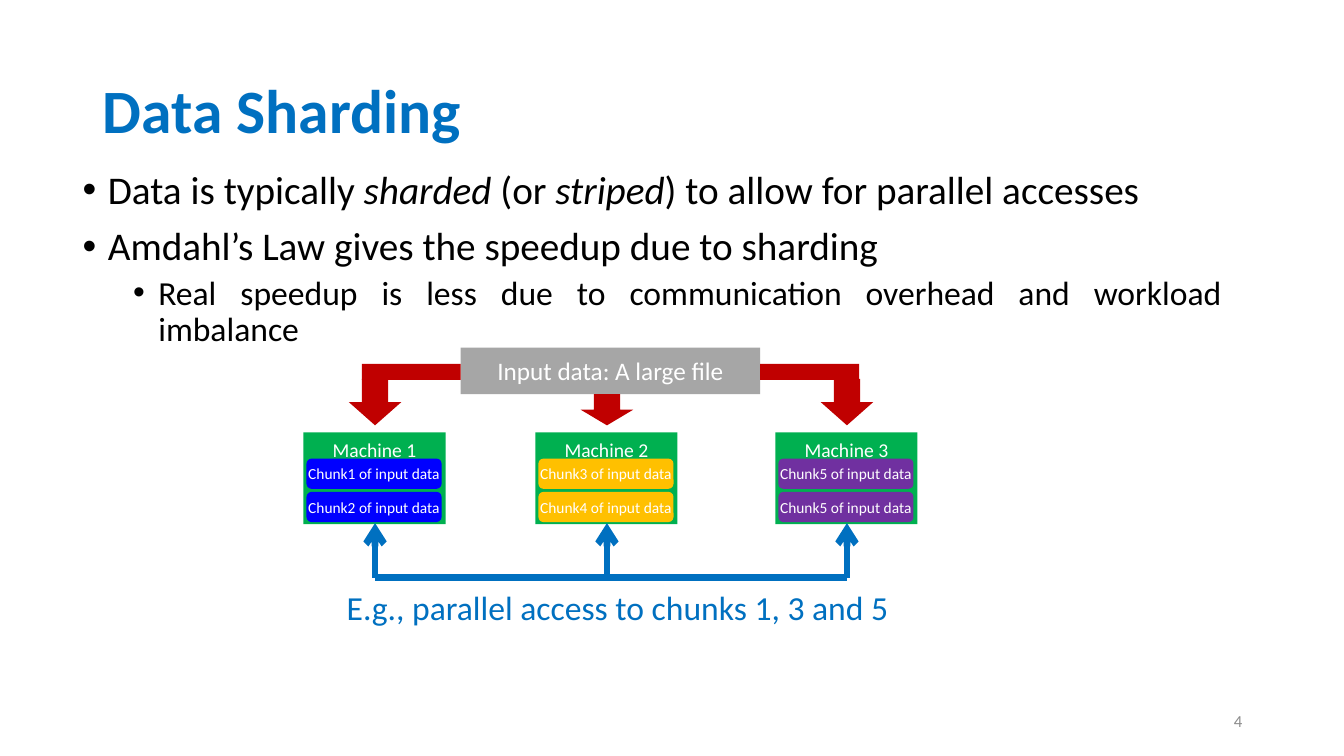
"""Builds the Data Sharding slide."""
from dataclasses import dataclass

from lxml import etree
from pptx import Presentation
from pptx.dml.color import RGBColor
from pptx.enum.shapes import MSO_CONNECTOR, MSO_SHAPE
from pptx.enum.text import MSO_ANCHOR, MSO_AUTO_SIZE, PP_ALIGN
from pptx.oxml.ns import qn
from pptx.util import Inches, Pt

RECT, ROUND, DOWN = MSO_SHAPE.RECTANGLE, MSO_SHAPE.ROUNDED_RECTANGLE, MSO_SHAPE.DOWN_ARROW
LINE = MSO_CONNECTOR.STRAIGHT
TOP, MIDDLE = MSO_ANCHOR.TOP, MSO_ANCHOR.MIDDLE
LEFT, CENTER, RIGHT, JUST = PP_ALIGN.LEFT, PP_ALIGN.CENTER, PP_ALIGN.RIGHT, PP_ALIGN.JUSTIFY
FIXED = MSO_AUTO_SIZE.NONE


@dataclass(frozen=True)
class Theme:
    """Colours, type sizes and font of the slide."""
    font: str = "Calibri"
    blue: str = "0070C0"
    black: str = "000000"
    white: str = "FFFFFF"
    gray: str = "A6A6A6"
    dim: str = "8C8C8C"
    green: str = "00B050"
    red: str = "C00000"
    chunks: tuple = ("0000FF", "FFC000", "7030A0")
    title: int = 44
    body: int = 28
    sub: int = 24
    file: int = 18
    node: int = 14
    chunk: int = 11
    page: int = 12
    stroke: float = 4.75


class Board:
    """Holds the theme and the current slide and draws on it."""

    def __init__(self, deck, theme):
        self.theme = theme
        self.slide = deck.slides.add_slide(deck.slide_layouts[1])

    def add_text(self, para, text, size, color, bold=False, italic=False):
        run = para.add_run()
        run.text = text
        font = run.font
        font.name, font.size = self.theme.font, Pt(size)
        font.bold, font.italic = bold, italic
        font.color.rgb = RGBColor.from_string(color)

    def place(self, shape, left, top, width, height):
        shape.left, shape.top = Inches(left), Inches(top)
        shape.width, shape.height = Inches(width), Inches(height)

    def title(self, text, *box):
        shape = self.slide.shapes.title
        self.place(shape, *box)
        frame = shape.text_frame
        frame.auto_size, frame.vertical_anchor = FIXED, MIDDLE
        para = frame.paragraphs[0]
        para.alignment, para.line_spacing = LEFT, 0.9
        self.add_text(para, text, self.theme.title, self.theme.blue, bold=True)

    def body(self, items, *box):
        shape = self.slide.placeholders[1]
        self.place(shape, *box)
        frame = shape.text_frame
        frame.auto_size, frame.vertical_anchor = FIXED, TOP
        for i, (level, align, runs) in enumerate(items):
            para = frame.add_paragraph() if i else frame.paragraphs[0]
            para.level, para.alignment = level, align
            para.line_spacing = 0.9
            para.space_before = Pt(5 if level else 10)
            self.bullet(para, 0.25 + 0.5 * level)
            size = self.theme.sub if level else self.theme.body
            for text, italic in runs:
                self.add_text(para, text, size, self.theme.black, italic=italic)

    def bullet(self, para, indent):
        props = para._p.get_or_add_pPr()
        props.set("marL", str(Inches(indent)))
        props.set("indent", str(Inches(-0.25)))
        etree.SubElement(props, qn("a:buFont"), typeface="Arial")
        etree.SubElement(props, qn("a:buChar"), char="•")

    def label(self, text, size, color, align, anchor, *box):
        shape = self.slide.shapes.add_textbox(*map(Inches, box))
        frame = shape.text_frame
        frame.word_wrap, frame.vertical_anchor = False, anchor
        para = frame.paragraphs[0]
        para.alignment = align
        self.add_text(para, text, size, color)

    def block(self, kind, fill, *box, text="", size=0, anchor=MIDDLE, inset=0.1):
        shape = self.slide.shapes.add_shape(kind, *map(Inches, box))
        shape.shadow.inherit = False
        shape.fill.solid()
        shape.fill.fore_color.rgb = RGBColor.from_string(fill)
        shape.line.fill.background()
        if text:
            frame = shape.text_frame
            frame.word_wrap, frame.vertical_anchor = False, anchor
            frame.margin_left = frame.margin_right = Inches(inset)
            para = frame.paragraphs[0]
            para.alignment = CENTER
            self.add_text(para, text, size, self.theme.white)

    def line(self, *ends, arrow=False):
        link = self.slide.shapes.add_connector(LINE, *map(Inches, ends))
        link.line.width = Pt(self.theme.stroke)
        link.line.color.rgb = RGBColor.from_string(self.theme.blue)
        props = link._element.spPr
        if arrow:
            etree.SubElement(props.find(qn("a:ln")), qn("a:tailEnd"), type="arrow")
        etree.SubElement(props, qn("a:effectLst"))


def main():
    deck = Presentation()
    deck.slide_width, deck.slide_height = Inches(13.33), Inches(7.5)
    theme = Theme()
    board = Board(deck, theme)

    board.title("Data Sharding", 0.92, 0.4, 11.5, 1.45)
    board.body([
        (0, LEFT, [("Data is typically ", False), ("sharded", True), (" (or ", False),
                   ("striped", True), (") to allow for parallel accesses", False)]),
        (0, JUST, [("Amdahl’s Law gives the speedup due to sharding", False)]),
        (1, JUST, [("Real speedup is less due to communication overhead "
                    "and workload imbalance", False)]),
    ], 0.72, 1.64, 11.5, 5.64)
    board.label("E.g., parallel access to chunks 1, 3 and 5", theme.sub, theme.blue,
                LEFT, TOP, 3.34, 5.77, 5.62, 0.5)

    board.block(RECT, theme.gray, 4.57, 3.45, 2.97, 0.46,
                text="Input data: A large file", size=theme.file)
    for left in (3.59, 7.54):
        board.block(RECT, theme.red, left, 3.61, 0.98, 0.16)

    nodes = [(3.01, 3.76, (1, 2)), (5.31, 3.91, (3, 4)), (7.69, 3.76, (5, 5))]
    rail = 5.73
    mids = [left + 0.71 for left, _, _ in nodes]
    for i, (left, top, chunks) in enumerate(nodes):
        board.block(DOWN, theme.red, left + 0.45, top, 0.52, 4.22 - top)
        board.block(RECT, theme.green, left, 4.29, 1.41, 0.91,
                    text=f"Machine {i + 1}", size=theme.node, anchor=TOP)
        for row, chunk in enumerate(chunks):
            board.block(ROUND, theme.chunks[i], left + 0.03, 4.55 + 0.33 * row, 1.34, 0.3,
                        text=f"Chunk{chunk} of input data", size=theme.chunk, inset=0)
        board.line(mids[i], rail, mids[i], 5.19, arrow=True)
    board.line(mids[0], rail, mids[-1], rail)

    board.label("4", theme.page, theme.dim, RIGHT, MIDDLE, 9.42, 6.95, 3, 0.4)
    deck.save("out.pptx")


if __name__ == "__main__":
    main()
